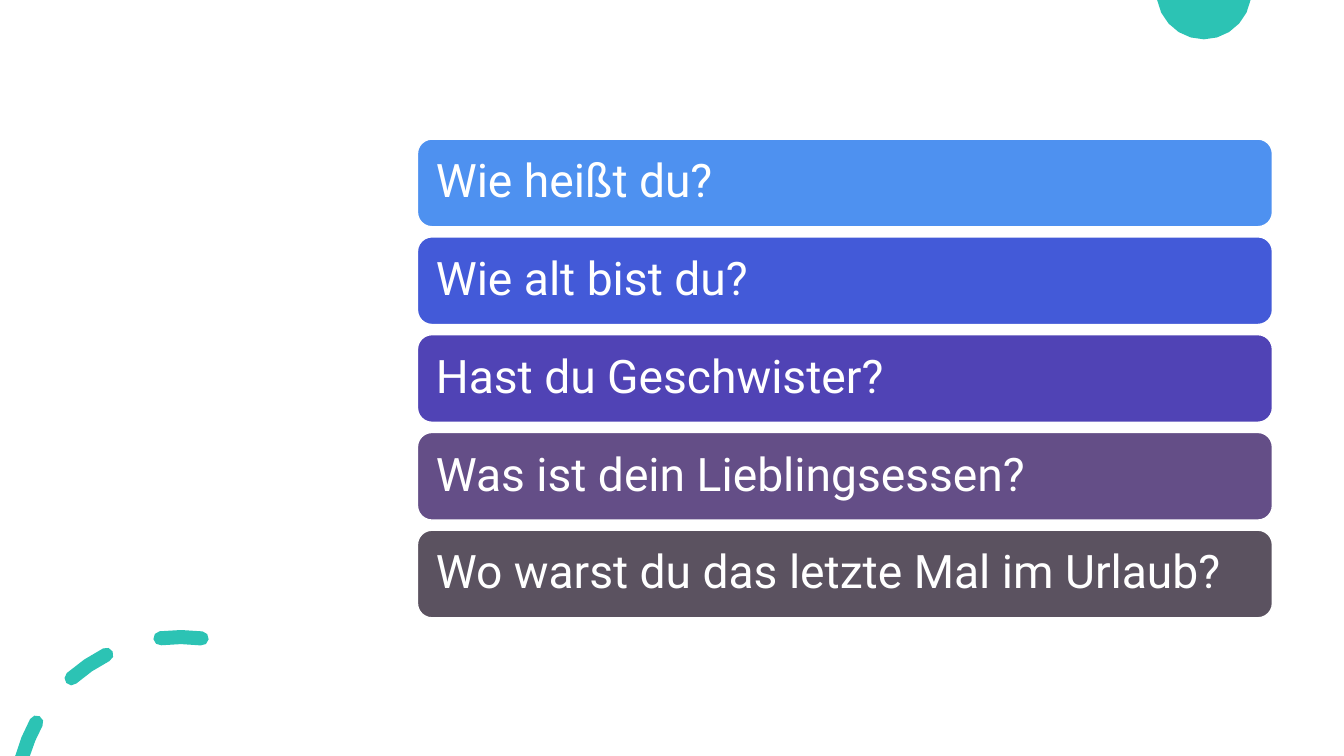
from dataclasses import dataclass
from math import acos, cos, degrees, radians, sin

from pptx import Presentation
from pptx import util as u
from pptx.dml.color import RGBColor
from pptx.enum import shapes, text

# Content: question and bar colour
QUESTIONS = [
    ("Wie heißt du?", "4E91F0"),
    ("Wie alt bist du?", "435AD8"),
    ("Hast du Geschwister?", "5043B5"),
    ("Was ist dein Lieblingsessen?", "644E87"),
    ("Wo warst du das letzte Mal im Urlaub?", "5B5260"),
]
# Dashes of the ring: start and end in degrees, clockwise from the top
DASHES = [(-90, -61.3), (-41.5, -26.8), (-7, 7.4)]


@dataclass
class Theme:
    accent: str = "2CC3B4"
    light: str = "FFFFFF"
    font: str = "Roboto"
    size: float = 33


# Geometry in inches
WIDTH, HEIGHT = 13.33, 7.5
BAR_LEFT, BAR_TOP, BAR_WIDTH, BAR_HEIGHT, BAR_PITCH = 4.14, 1.38, 8.48, 0.87, 0.97
BAR_INSET = 0.14
DISC_X, DISC_Y, DISC_RADIUS = 11.94, -0.08, 0.47
RING_X, RING_Y, RING_RADIUS, DASH_HALF = 1.79, 7.95, 1.63, 0.07

theme = Theme()
deck = Presentation()
deck.slide_width, deck.slide_height = u.Inches(WIDTH), u.Inches(HEIGHT)
slide = deck.slides.add_slide(deck.slide_layouts[6])


def arc(x, y, radius, start, end, steps):
    angles = [radians(start + (end - start) * i / steps) for i in range(steps + 1)]
    return [(x + radius * sin(a), y - radius * cos(a)) for a in angles]


def dash_outline(start, end):
    """Band along the ring with round ends, cut flat at the slide's bottom."""
    outer, inner = RING_RADIUS + DASH_HALF, RING_RADIUS - DASH_HALF

    def first(radius):
        return max(start, -degrees(acos((RING_Y - HEIGHT) / radius)))

    def cap(angle, turn):
        x, y = arc(RING_X, RING_Y, RING_RADIUS, angle, angle, 1)[0]
        return arc(x, y, DASH_HALF, angle + turn, angle + turn + 180, 4)[1:-1]

    points = arc(RING_X, RING_Y, outer, first(outer), end, 2) + cap(end, 0)
    points += arc(RING_X, RING_Y, inner, end, first(inner), 2)
    if first(outer) == start:
        points += cap(start, 180)
    return points


def add_outlines(outlines):
    scaled = [[(u.Inches(x), u.Inches(y)) for x, y in line] for line in outlines]
    builder = slide.shapes.build_freeform(*scaled[0][0])
    for index, points in enumerate(scaled):
        if index:
            builder.move_to(*points[0])
        builder.add_line_segments(points[1:], close=True)
    paint(builder.convert_to_shape(), theme.accent)


def paint(shape, colour):
    shape.shadow.inherit = False
    shape.fill.solid()
    shape.fill.fore_color.rgb = RGBColor.from_string(colour)
    shape.line.fill.background()


# Decorations: disc cut by the top edge, dashed ring in the corner
edge = degrees(acos(DISC_Y / DISC_RADIUS))
add_outlines([arc(DISC_X, DISC_Y, DISC_RADIUS, edge, 360 - edge, 10)])
add_outlines([dash_outline(*dash) for dash in DASHES])

# Question bars
for row, (question, colour) in enumerate(QUESTIONS):
    bar = slide.shapes.add_shape(
        shapes.MSO_SHAPE.ROUNDED_RECTANGLE,
        u.Inches(BAR_LEFT), u.Inches(BAR_TOP + row * BAR_PITCH),
        u.Inches(BAR_WIDTH), u.Inches(BAR_HEIGHT))
    paint(bar, colour)
    bar.line.color.rgb = RGBColor.from_string(theme.light)
    bar.line.width = u.Pt(1)

    frame = bar.text_frame
    frame.text = question
    frame.word_wrap = True
    frame.vertical_anchor = text.MSO_ANCHOR.MIDDLE
    frame.margin_left = frame.margin_right = u.Inches(BAR_INSET)
    frame.margin_top = frame.margin_bottom = u.Inches(BAR_INSET)
    line = frame.paragraphs[0]
    line.alignment = text.PP_ALIGN.LEFT
    line.line_spacing = 0.9
    font = line.runs[0].font
    font.name, font.size = theme.font, u.Pt(theme.size)
    font.color.rgb = RGBColor.from_string(theme.light)

deck.save("out.pptx")
